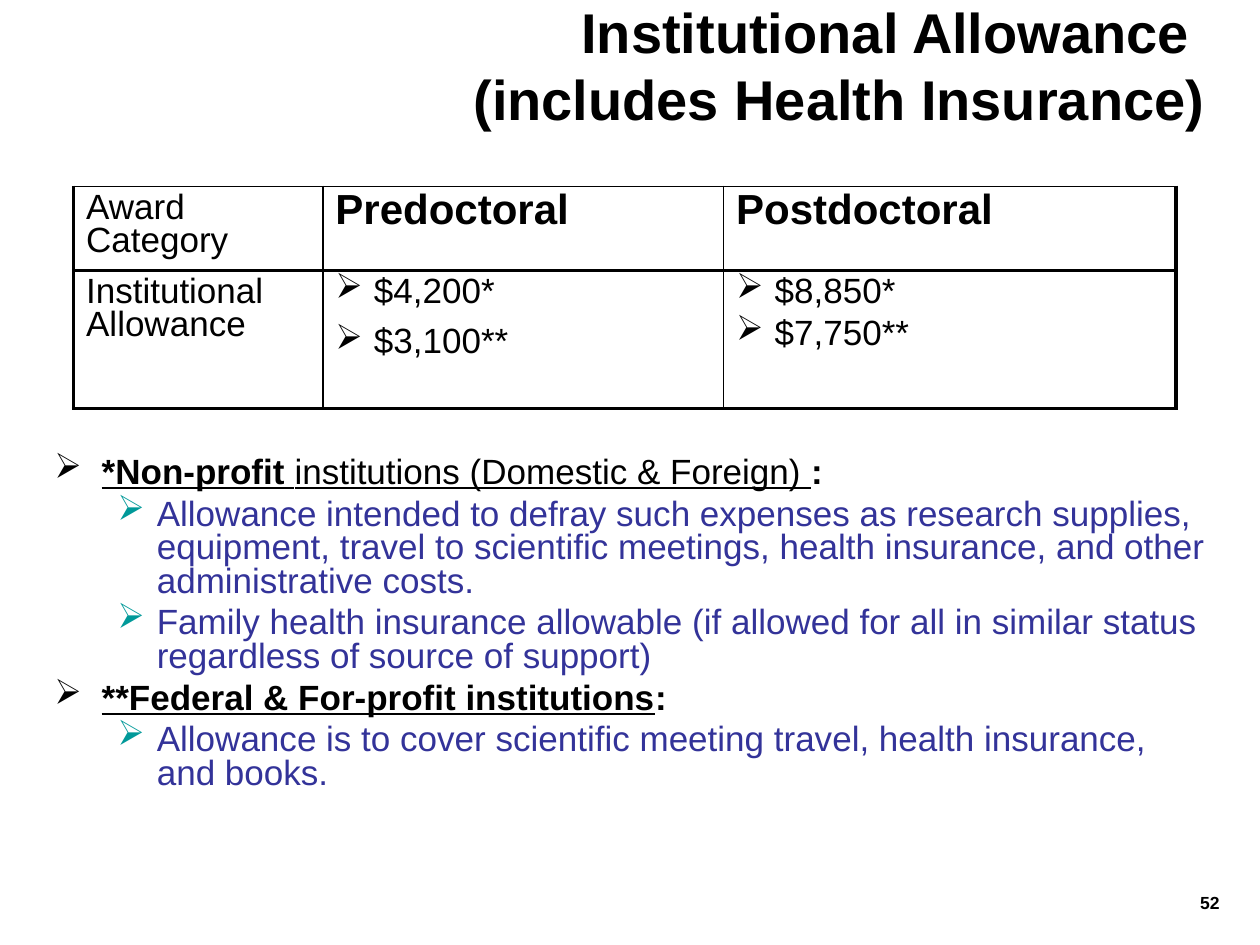
from dataclasses import dataclass

from lxml.etree import SubElement
from pptx import Presentation
from pptx.dml.color import RGBColor
from pptx.enum.text import MSO_ANCHOR, PP_ALIGN
from pptx.oxml import parse_xml
from pptx.oxml.ns import nsdecls, qn
from pptx.util import Pt


@dataclass(frozen=True)
class Theme:
    font: str = "Arial"
    ink: str = "000000"
    detail: str = "333399"
    accent: str = "009999"
    title: int = 32
    heading: int = 24
    body: int = 20
    number: int = 10
    thin: float = 1
    thick: float = 2.25


THEME = Theme()
BULLET = "➢"


def add_bullet(para, left, hanging, color):
    properties = para._p.get_or_add_pPr()
    properties.set("marL", str(Pt(left)))
    properties.set("indent", str(-Pt(hanging)))
    bullet_color = SubElement(properties, qn("a:buClr"))
    SubElement(bullet_color, qn("a:srgbClr")).set("val", color)
    SubElement(properties, qn("a:buChar")).set("char", BULLET)


def write_para(para, spans, size, color=THEME.ink, bullet=None, **formats):
    """Write (text, font formats) spans; a newline is a line break."""
    if bullet:
        add_bullet(para, *bullet)
    for name, value in formats.items():
        setattr(para, name, value)
    for text, extra in spans:
        for index, line in enumerate(text.split("\n")):
            if index:
                para.add_line_break()
            span = para.add_run()
            span.text = line
            font_formats = {"name": THEME.font, "size": Pt(size), **extra}
            for name, value in font_formats.items():
                setattr(span.font, name, value)
            span.font.color.rgb = RGBColor.from_string(color)


def next_para(frame, index):
    return frame.add_paragraph() if index else frame.paragraphs[0]


def add_frame(page, box, anchor=MSO_ANCHOR.TOP):
    frame = page.shapes.add_textbox(*map(Pt, box)).text_frame
    frame.word_wrap = True
    frame.vertical_anchor = anchor
    return frame


def add_title(page, box):
    frame = add_frame(page, box, MSO_ANCHOR.MIDDLE)
    text = "Institutional Allowance \n(includes Health Insurance)"
    write_para(frame.paragraphs[0], [(text, {"bold": True})], THEME.title,
               alignment=PP_ALIGN.RIGHT)


def set_borders(cell, widths):
    properties = cell._tc.get_or_add_tcPr()
    for index, (side, width) in enumerate(zip("LRTB", widths)):
        line = parse_xml(
            f'<a:ln{side} {nsdecls("a")} w="{Pt(width)}"><a:solidFill>'
            f'<a:srgbClr val="{THEME.ink}"/></a:solidFill></a:ln{side}>')
        properties.insert(index, line)


def add_allowance_table(page, box):
    column_widths = (142.5, 229, 258.5)
    row_heights = (45.5, 79)
    # Each cell: lines, size, bold, bulleted, space before later lines
    rows = [
        [(["Award\nCategory"], THEME.body, False, False, 0),
         (["Predoctoral"], THEME.heading, True, False, 0),
         (["Postdoctoral"], THEME.heading, True, False, 0)],
        [(["Institutional Allowance"], THEME.body, False, False, 0),
         (["$4,200*", "$3,100**"], THEME.body, False, True, 10),
         (["$8,850*", "$7,750**"], THEME.body, False, True, 5)],
    ]
    table = page.shapes.add_table(len(rows), len(column_widths), *map(Pt, box)).table
    table.first_row = table.horz_banding = False
    for column, width in zip(table.columns, column_widths):
        column.width = Pt(width)
    last_column = len(column_widths) - 1
    for row_index, (row, height) in enumerate(zip(rows, row_heights)):
        table.rows[row_index].height = Pt(height)
        for column_index, (lines, size, bold, bulleted, gap) in enumerate(row):
            cell = table.cell(row_index, column_index)
            cell.fill.background()
            set_borders(cell, (
                THEME.thin if column_index else THEME.thick,
                THEME.thick if column_index == last_column else THEME.thin,
                THEME.thick if row_index else THEME.thin,
                THEME.thick))
            for index, line in enumerate(lines):
                write_para(next_para(cell.text_frame, index),
                           [(line, {"bold": bold})], size,
                           bullet=(22, 22, THEME.ink) if bulleted else None,
                           line_spacing=0.85, space_before=Pt(gap if index else 0))


def add_notes_list(page, box):
    strong = {"bold": True}
    underlined = {"bold": True, "underline": True}
    # Each entry: level, spans
    entries = [
        (0, [("*Non-profit ", underlined),
             ("institutions (Domestic & Foreign) ", {"underline": True}),
             (":", strong)]),
        (1, [("Allowance intended to defray such expenses as research supplies, "
              "equipment, travel to scientific meetings, health insurance, and "
              "other administrative costs.", {})]),
        (1, [("Family health insurance allowable (if allowed for all in similar "
              "status regardless of source of support)", {})]),
        (0, [("**Federal & For-profit institutions", underlined), (":", strong)]),
        (1, [("Allowance is to cover scientific meeting travel, health insurance, "
              "and books.", {})]),
    ]
    # Text colour and bullet (left, hanging, colour) by level
    levels = [(THEME.ink, (27, 27, THEME.ink)),
              (THEME.detail, (58.5, 22.5, THEME.accent))]
    frame = add_frame(page, box)
    for index, (level, spans) in enumerate(entries):
        color, bullet = levels[level]
        write_para(next_para(frame, index), spans, THEME.body, color, bullet,
                   level=level, line_spacing=0.8,
                   space_before=Pt(4.5 if index else 0))


def add_page_number(page, box):
    frame = add_frame(page, box)
    write_para(frame.paragraphs[0], [("52", {"bold": True})], THEME.number,
               alignment=PP_ALIGN.RIGHT)


def main():
    deck = Presentation()
    deck.slide_width, deck.slide_height = Pt(720), Pt(540)
    page = deck.slides.add_slide(deck.slide_layouts[6])
    add_title(page, (12, 0, 684, 73.5))
    add_notes_list(page, (24, 258, 672, 216))
    add_allowance_table(page, (42, 106.5, 630, 124.5))
    add_page_number(page, (674, 506, 30, 24))
    deck.save("out.pptx")


if __name__ == "__main__":
    main()
